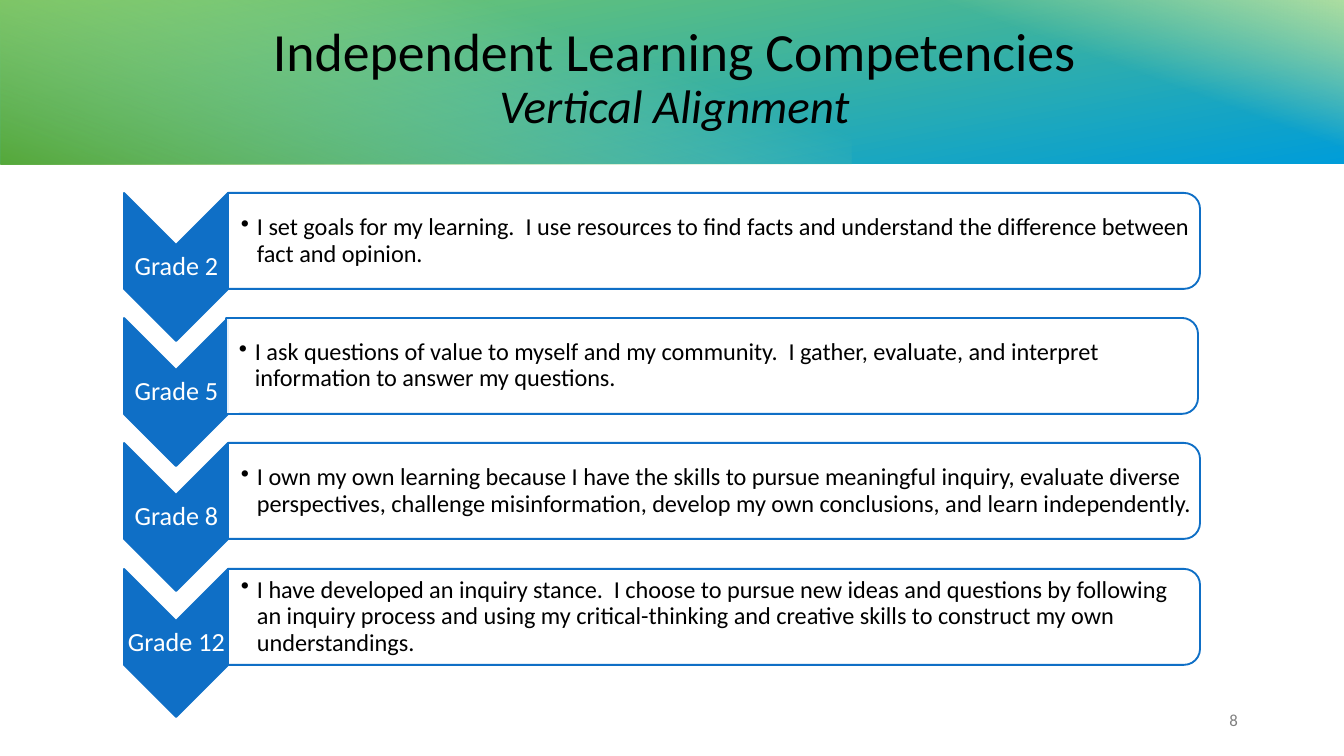
import pptx
import pptx.util
import pptx.dml.color
import pptx.enum.shapes
import pptx.enum.text
import pptx.oxml.ns
from dataclasses import dataclass
from lxml import etree

PX = 914400 / 134.4  # EMU in one px
KIND = pptx.enum.shapes.MSO_SHAPE
ALIGN = pptx.enum.text.PP_ALIGN
MIDDLE = pptx.enum.text.MSO_ANCHOR.MIDDLE


@dataclass(frozen=True)
class Theme:
    font: str = "Calibri"
    blue: str = "0F6FC6"
    white: str = "FFFFFF"
    black: str = "000000"
    gray: str = "808080"
    lime: str = "7CCA62"
    sky: str = "009DD9"
    mint: str = "B0DFA1"
    leaf: str = "55A839"
    title: float = 28.8
    sub: float = 25.2
    label: float = 14
    body: float = 13
    page: float = 9


THEME = Theme()

GRADES = [
    ("Grade 2", "I set goals for my learning.  I use resources to find facts "
     "and understand the difference between fact and opinion."),
    ("Grade 5", "I ask questions of value to myself and my community.  I gather, "
     "evaluate, and interpret information to answer my questions."),
    ("Grade 8", "I own my own learning because I have the skills to pursue "
     "meaningful inquiry, evaluate diverse perspectives, challenge "
     "misinformation, develop my own conclusions, and learn independently."),
    ("Grade 12", "I have developed an inquiry stance.  I choose to pursue new "
     "ideas and questions by following an inquiry process and using my "
     "critical-thinking and creative skills to construct my own understandings."),
]


def px(count):
    return pptx.util.Emu(round(count * PX))


def rgb(code):
    return pptx.dml.color.RGBColor.from_string(code)


def set_all(item, values):
    for name, value in values.items():
        setattr(item, name, value)


def set_alpha(color, percent):
    node = etree.SubElement(color, pptx.oxml.ns.qn("a:alpha"))
    node.set("val", str(percent * 1000))


def add_turned(slide, kind, box, turn):
    """Add a shape turned by 90 or 270 degrees that covers the box as seen."""
    left, top, width, height = box
    shift = (width - height) / 2
    shape = slide.shapes.add_shape(
        kind, px(left + shift), px(top - shift), px(height), px(width))
    shape.rotation = turn
    shape.shadow.inherit = False
    return shape


def add_band(slide, box, turn, angle, stops):
    """Add a band with two stops of (position, colour, opacity)."""
    shape = add_turned(slide, KIND.RECTANGLE, box, turn)
    shape.line.fill.background()
    shape.fill.gradient()
    shape.fill.gradient_angle = 360 - angle
    for stop, (place, code, alpha) in zip(shape.fill.gradient_stops, stops):
        stop.position = place
        stop.color.rgb = rgb(code)
    colors = shape.element.spPr.iter(pptx.oxml.ns.qn("a:srgbClr"))
    for color, (place, code, alpha) in zip(colors, stops):
        if alpha < 100:
            set_alpha(color, alpha)


def add_block(slide, kind, box, code, alpha=100):
    """Add an outlined block that points or rounds off after a quarter turn."""
    shape = add_turned(slide, kind, box, 90)
    shape.fill.solid()
    shape.fill.fore_color.rgb = rgb(code)
    if alpha < 100:
        set_alpha(shape.element.spPr.find(".//" + pptx.oxml.ns.qn("a:srgbClr")), alpha)
    shape.line.color.rgb = rgb(THEME.blue)
    shape.line.width = pptx.util.Pt(1)


def add_run(para, text, size, code, italic=False):
    run = para.add_run()
    run.text = text
    set_all(run.font, {"name": THEME.font, "size": pptx.util.Pt(size), "italic": italic})
    run.font.color.rgb = rgb(code)


def add_text(slide, box, align, inset=(13, 7, 13, 7), spacing=0.9):
    """Add an empty text box and return its paragraph."""
    frame = slide.shapes.add_textbox(*map(px, box)).text_frame
    left, top, right, bottom = map(px, inset)
    set_all(frame, {
        "word_wrap": True, "vertical_anchor": MIDDLE,
        "margin_left": left, "margin_top": top,
        "margin_right": right, "margin_bottom": bottom})
    para = frame.paragraphs[0]
    set_all(para, {"alignment": align, "line_spacing": spacing})
    return para


def add_bullet(para):
    props = para._p.get_or_add_pPr()
    props.set("marL", str(px(16)))
    props.set("indent", str(px(-16)))
    etree.SubElement(props, pptx.oxml.ns.qn("a:buChar")).set("char", "•")


def add_grade(slide, top, left, grade, goal):
    # Chevron with its grade
    add_block(slide, KIND.CHEVRON, (124, top, 104, 148), THEME.blue)
    para = add_text(slide, (125, top + 52, 103, 44), ALIGN.CENTER, (1, 1, 1, 1))
    add_run(para, grade, THEME.label, THEME.white)
    # Card with its goal
    add_block(slide, KIND.ROUND_2_SAME_RECTANGLE, (left, top, 972, 96), THEME.white, 90)
    para = add_text(slide, (left, top + 5, 968, 86), ALIGN.LEFT, (13, 1, 1, 1))
    add_bullet(para)
    add_run(para, goal, THEME.body, THEME.black)


def main():
    deck = pptx.Presentation()
    set_all(deck, {"slide_width": px(1344), "slide_height": px(756)})
    slide = deck.slides.add_slide(deck.slide_layouts[6])

    # Header bands
    add_band(slide, (0, -4, 1345, 168), 270, 170,
             [(0, THEME.lime, 100), (1, THEME.sky, 100)])
    add_band(slide, (787, -3, 558, 167), 270, 20,
             [(0.59, THEME.mint, 0), (1, THEME.mint, 100)])
    add_band(slide, (0, -4, 851, 168), 90, 20,
             [(0.29, THEME.mint, 0), (1, THEME.leaf, 100)])

    # Title
    para = add_text(slide, (97, 15, 1155, 129), ALIGN.CENTER)
    add_run(para, "Independent Learning Competencies", THEME.title, THEME.black)
    para.add_line_break()
    add_run(para, "Vertical Alignment", THEME.sub, THEME.black, True)

    # Grade rows; the second card sits slightly to the left
    for row, (grade, goal) in enumerate(GRADES):
        left = 226 if row == 1 else 228
        add_grade(slide, 193 + row * 376 // 3, left, grade, goal)

    # Page number
    para = add_text(slide, (949, 700, 302, 40), ALIGN.RIGHT, spacing=1.0)
    add_run(para, "8", THEME.page, THEME.gray)

    deck.save("out.pptx")


if __name__ == "__main__":
    main()
